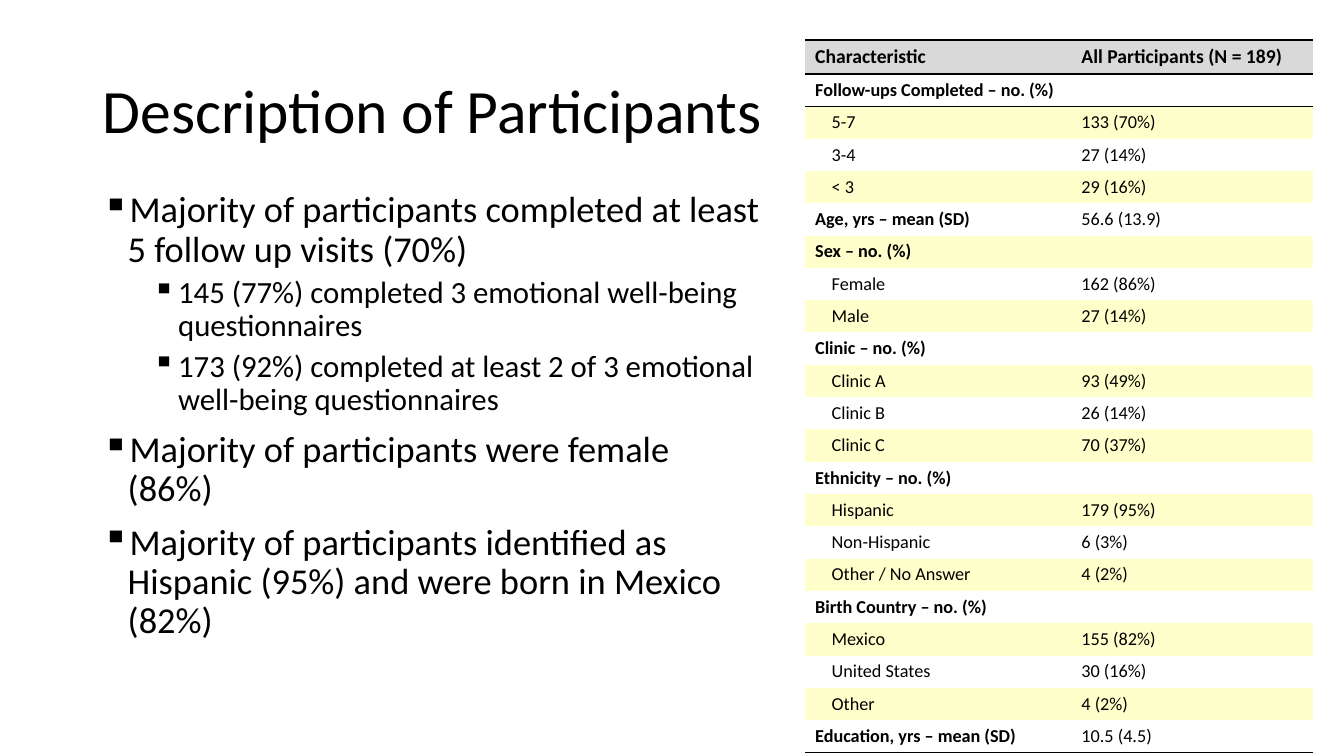
from lxml.etree import SubElement
from pptx import Presentation
from pptx.dml.color import RGBColor
from pptx.enum.text import MSO_ANCHOR, MSO_AUTO_SIZE, PP_ALIGN
from pptx.oxml.ns import qn
from pptx.util import Cm, Pt

FONT = "Calibri"
COLORS = {"text": "000000", "header": "D9D9D9", "plain": "FFFFFF",
          "band": "FFFFCC", "rule": "000000"}
NO_GRID_STYLE = "{2D5ABB26-0587-4C30-8999-92F81FD0307C}"

FINDINGS = [
    (0, "Majority of participants completed at least 5 follow up visits (70%)"),
    (1, "145 (77%) completed 3 emotional well-being questionnaires"),
    (1, "173 (92%) completed at least 2 of 3 emotional well-being questionnaires"),
    (0, "Majority of participants were female (86%)"),
    (0, "Majority of participants identified as Hispanic (95%) and were born in Mexico (82%)"),
]

GROUPS = [
    ("Follow-ups Completed – no. (%)", "",
     [("5-7", "133 (70%)"), ("3-4", "27 (14%)"), ("< 3", "29 (16%)")]),
    ("Age, yrs – mean (SD)", "56.6 (13.9)", []),
    ("Sex – no. (%)", "", [("Female", "162 (86%)"), ("Male", "27 (14%)")]),
    ("Clinic – no. (%)", "",
     [("Clinic A", "93 (49%)"), ("Clinic B", "26 (14%)"), ("Clinic C", "70 (37%)")]),
    ("Ethnicity – no. (%)", "",
     [("Hispanic", "179 (95%)"), ("Non-Hispanic", "6 (3%)"),
      ("Other / No Answer", "4 (2%)")]),
    ("Birth Country – no. (%)", "",
     [("Mexico", "155 (82%)"), ("United States", "30 (16%)"), ("Other", "4 (2%)")]),
    ("Education, yrs – mean (SD)", "10.5 (4.5)", []),
]


def format_runs(p, size, bold=False):
    for r in p.runs:
        r.font.name = FONT
        r.font.size = Pt(size)
        r.font.bold = bold
        r.font.color.rgb = RGBColor.from_string(COLORS["text"])


def add_title(s, left, top, width, height):
    sp = s.shapes.title
    sp.left, sp.top, sp.width, sp.height = left, top, width, height
    tf = sp.text_frame
    tf.text = "Description of Participants"
    tf.auto_size = MSO_AUTO_SIZE.NONE
    tf.vertical_anchor = MSO_ANCHOR.MIDDLE
    p = tf.paragraphs[0]
    p.alignment = PP_ALIGN.LEFT
    p.line_spacing = 0.9
    format_runs(p, 44)


def add_findings(s, left, top, width, height):
    tf = s.shapes.add_textbox(left, top, width, height).text_frame
    tf.word_wrap = True
    for i, (level, text) in enumerate(FINDINGS):
        p = tf.add_paragraph() if i else tf.paragraphs[0]
        p.text = text
        p.level = level
        pPr = p._p.get_or_add_pPr()
        pPr.set("marL", str(Cm(0.64 + 1.27 * level)))
        pPr.set("indent", str(-Cm(0.64)))
        SubElement(pPr, qn("a:buChar"), char="▪")
        p.line_spacing = 0.9
        if i:
            p.space_before = Pt(5 if level else 10)
        format_runs(p, 22 if level else 26)


def add_rule(cell, side):
    ln = SubElement(cell._tc.get_or_add_tcPr(), qn(f"a:{side}"), w=str(Pt(1)))
    fill = SubElement(ln, qn("a:solidFill"))
    SubElement(fill, qn("a:srgbClr"), val=COLORS["rule"])


def fill_cell(cell, text, size, bold, color, rules):
    for side in rules:
        add_rule(cell, side)
    cell.fill.solid()
    cell.fill.fore_color.rgb = RGBColor.from_string(color)
    p = cell.text_frame.paragraphs[0]
    if text:
        p.text = text
        format_runs(p, size, bold)
    else:
        SubElement(p._p, qn("a:endParaRPr"), sz=str(size * 100))


def add_characteristics(s, left, top, width, height):
    rows = [("header", "Characteristic", "All Participants (N = 189)")]
    for label, value, items in GROUPS:
        rows.append(("group", label, value))
        rows += [("item", *item) for item in items]
    table = s.shapes.add_table(len(rows), 2, left, top, width, height).table
    table.first_row = table.horz_banding = False
    table._tbl.tblPr.find(qn("a:tableStyleId")).text = NO_GRID_STYLE
    table.columns[0].width = Cm(6.71)
    table.columns[1].width = width - Cm(6.71)
    last = len(rows) - 1
    for i, (kind, label, value) in enumerate(rows):
        header = kind == "header"
        table.rows[i].height = Cm(0.84 if header else 0.8)
        size = 14 if header else 13
        color = COLORS["header" if header else "plain" if i % 2 else "band"]
        rules = {0: ["lnT", "lnB"], 1: ["lnT"], last: ["lnB"]}.get(i, [])
        name_cell, value_cell = table.cell(i, 0), table.cell(i, 1)
        fill_cell(name_cell, label, size, kind != "item", color, rules)
        fill_cell(value_cell, value, size, header, color, rules)
        if kind == "item":
            name_cell.margin_left = Cm(0.67)


def main():
    prs = Presentation()
    prs.slide_width, prs.slide_height = Cm(33.87), Cm(19.05)
    s = prs.slides.add_slide(prs.slide_layouts[5])
    add_title(s, Cm(2.33), Cm(1.01), Cm(29.21), Cm(3.68))
    add_characteristics(s, Cm(20.29), Cm(1.01), Cm(12.81), Cm(17.64))
    add_findings(s, Cm(2.33), Cm(4.7), Cm(17.15), Cm(12.65))
    prs.save("out.pptx")


if __name__ == "__main__":
    main()
